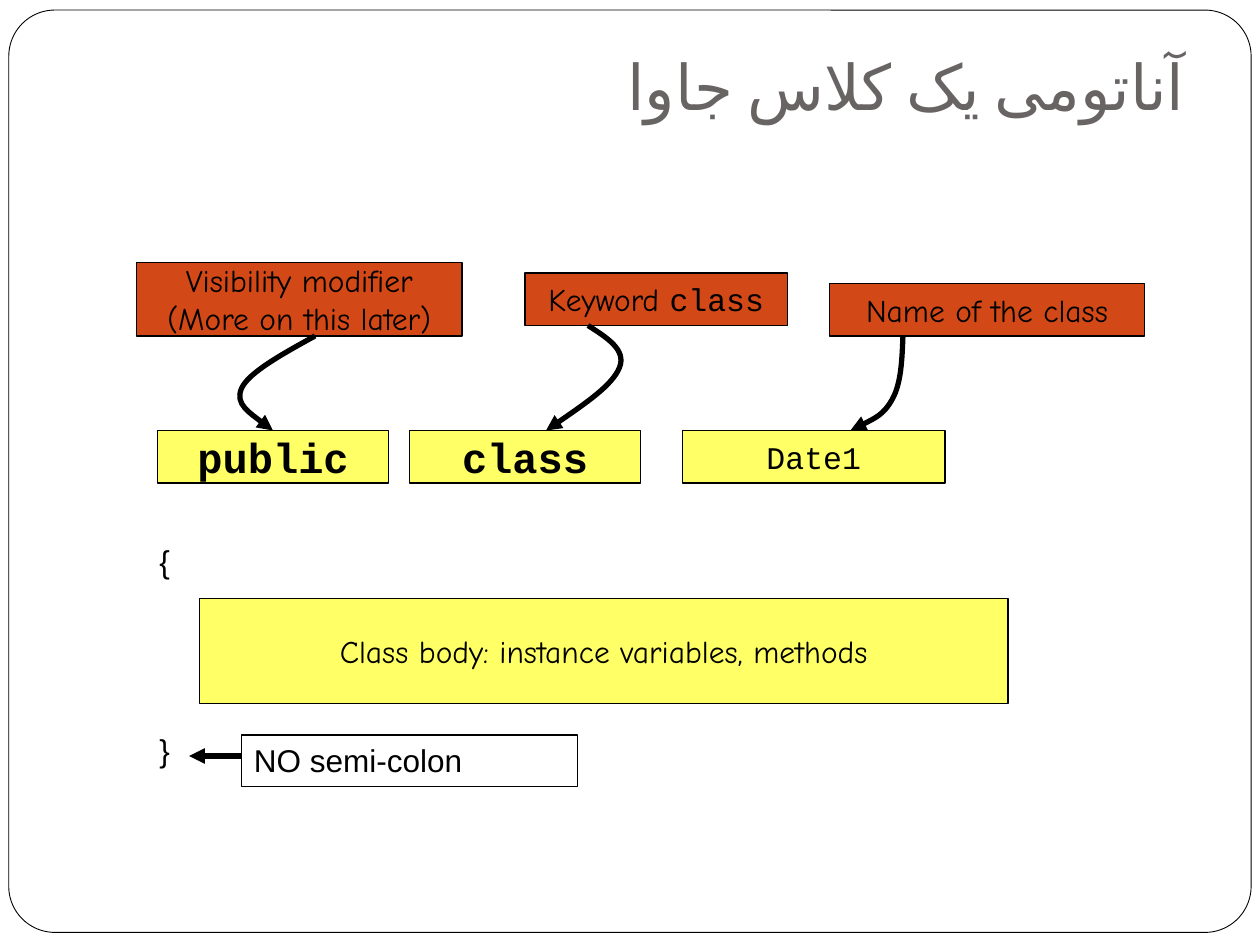
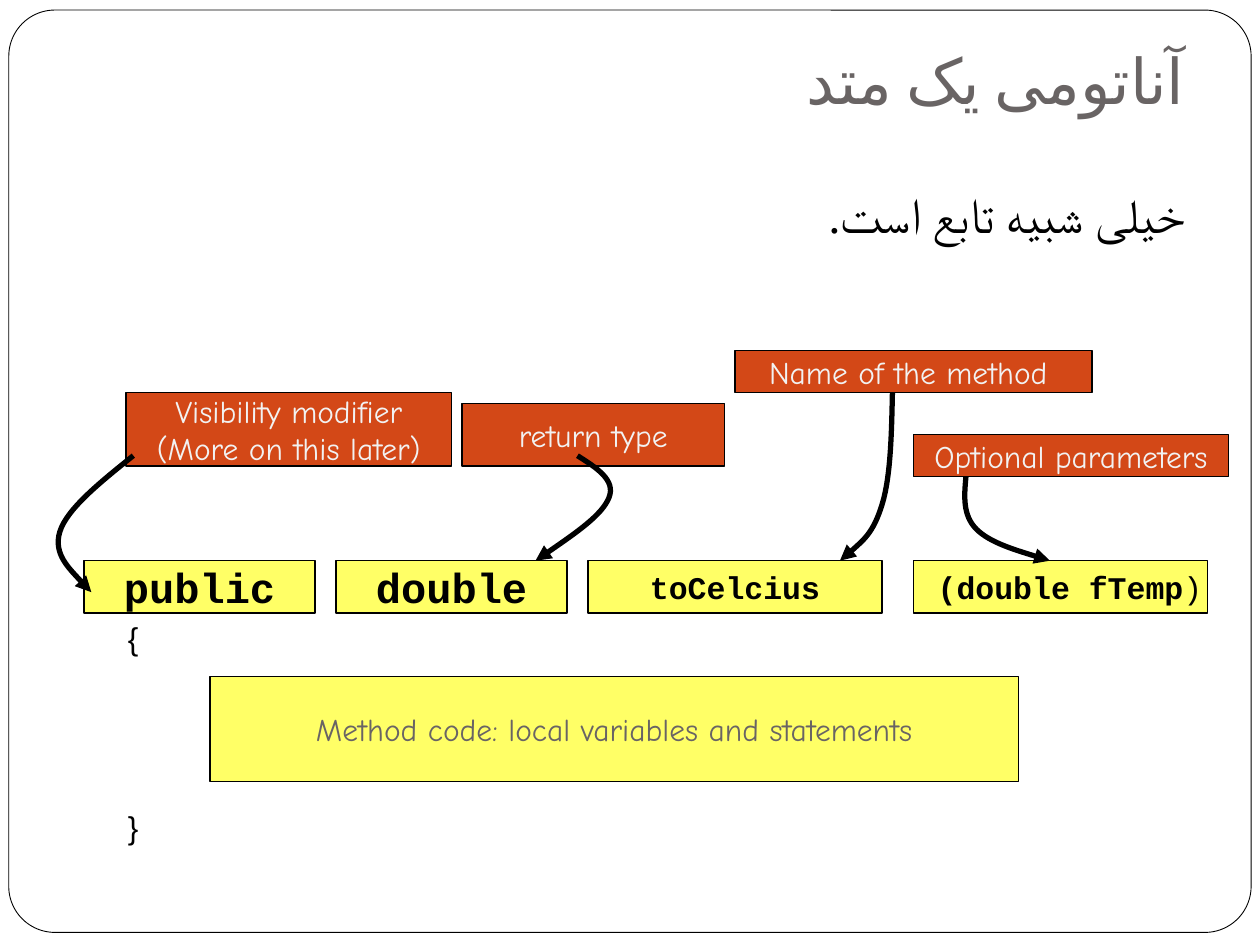
from dataclasses import dataclass

from lxml.etree import SubElement
from pptx import Presentation
from pptx.dml.color import RGBColor
from pptx.enum.shapes import MSO_CONNECTOR as Connector, MSO_SHAPE as Shape
from pptx.enum.text import MSO_ANCHOR as Anchor, PP_ALIGN as Align
from pptx.oxml.ns import qn
from pptx.util import Inches, Pt


@dataclass(frozen=True)
class Theme:
    ink: str = "000000"
    paper: str = "FFFFFF"
    grey: str = "696464"
    pale: str = "F2F2F2"
    rust: str = "D34817"
    yellow: str = "FFFF66"
    hairline: float = 0.5
    border: float = 0.75
    arrow: float = 3


THEME = Theme()
STYLES = {
    "title": dict(name="Cabin", size=36, color=THEME.grey),
    "lead": dict(name="Times New Roman", size=28),
    "label": dict(name="Comic Neue", size=18),
    "pale label": dict(name="Comic Neue", size=18, color=THEME.pale),
    "grey label": dict(name="Comic Neue", size=18, color=THEME.grey),
    "keyword": dict(name="Courier New", size=24, bold=True),
    "bold code": dict(name="Courier New", size=18, bold=True),
    "code": dict(name="Courier New", size=18),
    "plain": dict(name="Arial", size=18),
}

# Positions are grid cells, 12 to the inch: (column, row, columns, rows).
CELL = Inches(1) // 12
TOKEN_ROWS, BRACE_GAP, BODY_SIZE = 5, 18, (77, 10)
SHORT_PULL = 1 / 6

SLIDES = [
    dict(
        title="آناتومی یک کلاس جاوا",
        title_at=(12, 3.6, 102, 9.36),
        shift=0,
        labels=[
            ((13, 25, 31, 7), [("Visibility modifier\n(More on this later)", "label")]),
            ((79, 27, 30, 5), [("Name of the class", "label")]),
            ((50, 26, 25, 5), [("Keyword ", "label"), ("class", "code")]),
        ],
        token_row=41,
        tokens=[
            (15, 22, [("public", "keyword")]),
            (39, 22, [("class", "keyword")]),
            (65, 25, [("Date1", "code")]),
        ],
        brace_at=(14, 51),
        body_at=(19, 57),
        body=[("Class body: instance variables, methods", "label")],
        arrows=[
            ((30, 32), (23, 37), (26, 41), SHORT_PULL),
            ((56, 31), (59, 35), (52, 41), 0.5),
            ((86, 32), (85, 38), (81, 41), 0.5),
        ],
        remark=dict(text="NO semi-colon", at=(23, 70, 32, 4.9), tip=(18, 72)),
    ),
    dict(
        title="آناتومی یک متد",
        title_at=(6, 3, 108, 9.36),
        lead="خیلی شبیه تابع است.",
        lead_at=(6, 17, 108, 10),
        shift=0.4,
        labels=[
            ((12, 37, 31, 7), [("Visibility modifier\n(More on this later)", "pale label")]),
            ((70, 33, 34, 4), [("Name of the method ", "pale label")]),
            ((44, 38, 25, 6), [("return type", "pale label")]),
            ((87, 41, 30, 4), [("Optional parameters", "pale label")]),
        ],
        token_row=53,
        tokens=[
            (8, 22, [("public", "keyword")]),
            (32, 22, [("double", "keyword")]),
            (56, 28, [("toCelcius", "bold code")]),
            (87, 28, [(" ", "code"), ("(double fTemp", "bold code"), (")", "code")]),
        ],
        brace_at=(11, 58),
        body_at=(20, 64),
        body=[("Method code: local variables and statements", "grey label")],
        arrows=[
            ((12.7, 43), (5.7, 50.25), (8.7, 56), SHORT_PULL),
            ((55, 43), (58, 47), (51, 53), 0.5),
            ((85, 37), (84, 47.7), (80, 53), 0.5),
            ((92, 45), (93, 50), (100, 53), SHORT_PULL),
        ],
    ),
]


def cells(values, shift=0):
    """Turn grid cells into lengths, moving the row down by shift."""
    moved = [v + shift if i == 1 else v for i, v in enumerate(values)]
    return [round(v * CELL) for v in moved]


def write(frame, runs, align=Align.LEFT, rtl=False, **frame_format):
    for key, value in frame_format.items():
        setattr(frame, key, value)
    paragraph = frame.paragraphs[0]
    paragraph.alignment = align
    if rtl:
        paragraph._p.get_or_add_pPr().set("rtl", "1")
    for text, style in runs:
        look = dict(color=THEME.ink, bold=False) | STYLES[style]
        for number, line in enumerate(text.split("\n")):
            if number:
                paragraph.add_line_break()
            run = paragraph.add_run()
            run.text = line
            run.font.color.rgb = RGBColor.from_string(look["color"])
            for key, value in dict(name=look["name"], size=Pt(look["size"]), bold=look["bold"]).items():
                setattr(run.font, key, value)
            if rtl:
                properties = run._r.get_or_add_rPr()
                properties.set("lang", "fa-IR")
                SubElement(properties, qn("a:cs"), typeface=look["name"])


def add_text(slide, box, text, style, **layout):
    write(slide.shapes.add_textbox(*box).text_frame, [(text, style)], word_wrap=True, **layout)


def add_box(slide, box, fill=None, preset=Shape.RECTANGLE, width=THEME.border):
    shape = slide.shapes.add_shape(preset, *box)
    shape.shadow.inherit = False
    if fill:
        shape.fill.solid()
        shape.fill.fore_color.rgb = RGBColor.from_string(fill)
    else:
        shape.fill.background()
    draw_line(shape, width)
    return shape


def add_caption_box(slide, box, runs, fill):
    write(add_box(slide, box, fill).text_frame, runs, Align.CENTER,
          word_wrap=False, vertical_anchor=Anchor.MIDDLE)


def draw_line(shape, width, arrow=False):
    shape.line.width = Pt(width)
    shape.line.color.rgb = RGBColor.from_string(THEME.ink)
    if arrow:
        SubElement(shape.line._get_or_add_ln(), qn("a:tailEnd"), type="triangle")


def add_curved_arrow(slide, start, middle, end, pull, shift):
    """Draw a smooth curve through three points; pull sets the last handle."""
    def between(a, b, share):
        return tuple(p + (q - p) * share for p, q in zip(a, b))

    step = [(e - s) / 6 for s, e in zip(start, end)]
    before = tuple(m - d for m, d in zip(middle, step))
    after = tuple(m + d for m, d in zip(middle, step))
    points = [between(start, before, 0.5), before, middle, after, between(end, after, pull), end]

    builder = slide.shapes.build_freeform(*cells(start, shift))
    builder.add_line_segments([cells(p, shift) for p in points], close=False)
    curve = builder.convert_to_shape()
    curve.shadow.inherit = False
    curve.fill.background()
    draw_line(curve, THEME.arrow, arrow=True)

    outline = next(curve._element.iter(qn("a:path")))
    segments = outline.findall(qn("a:lnTo"))
    for first in range(0, len(segments), 3):
        bezier = SubElement(outline, qn("a:cubicBezTo"))
        for segment in segments[first:first + 3]:
            bezier.append(segment[0])
            outline.remove(segment)


def add_remark(slide, remark):
    box = cells(remark["at"])
    write(add_box(slide, box).text_frame, [(remark["text"], "plain")],
          word_wrap=True, vertical_anchor=Anchor.TOP)
    tip_x, tip_y = cells(remark["tip"])
    pointer = slide.shapes.add_connector(Connector.STRAIGHT, box[0], tip_y, tip_x, tip_y)
    draw_line(pointer, THEME.arrow, arrow=True)
    SubElement(pointer._element.spPr, qn("a:effectLst"))


def add_base(slide, content):
    """Add the rounded frame and the title that every slide has."""
    frame_box = [Inches(v) for v in (0.07, 0.08, 9.86, 7.32)]
    frame = add_box(slide, frame_box, THEME.paper, Shape.ROUNDED_RECTANGLE, THEME.hairline)
    frame.adjustments[0] = 0.05
    add_text(slide, cells(content["title_at"]), content["title"], "title", align=Align.RIGHT,
             rtl=True, vertical_anchor=Anchor.BOTTOM, margin_bottom=Inches(0.1))


def add_anatomy(slide, content):
    shift = content["shift"]
    for place, runs in content["labels"]:
        add_caption_box(slide, cells(place, shift), runs, THEME.rust)
    for column, width, runs in content["tokens"]:
        place = (column, content["token_row"], width, TOKEN_ROWS)
        add_caption_box(slide, cells(place, shift), runs, THEME.yellow)
    column, row = content["brace_at"]
    for number, brace in enumerate("{}"):
        place = (column, row + number * BRACE_GAP, 6, 4.8)
        add_text(slide, cells(place, shift), brace, "plain")
    add_caption_box(slide, cells(content["body_at"] + BODY_SIZE, shift), content["body"], THEME.yellow)
    for arrow in content["arrows"]:
        add_curved_arrow(slide, *arrow, shift)


def main():
    deck = Presentation()
    deck.slide_width, deck.slide_height = Inches(10), Inches(7.5)
    for content in SLIDES:
        slide = deck.slides.add_slide(deck.slide_layouts[6])
        add_base(slide, content)
        if "lead" in content:
            add_text(slide, cells(content["lead_at"]), content["lead"], "lead",
                     align=Align.RIGHT, rtl=True)
        add_anatomy(slide, content)
        if "remark" in content:
            add_remark(slide, content["remark"])
    deck.save("out.pptx")


if __name__ == "__main__":
    main()
